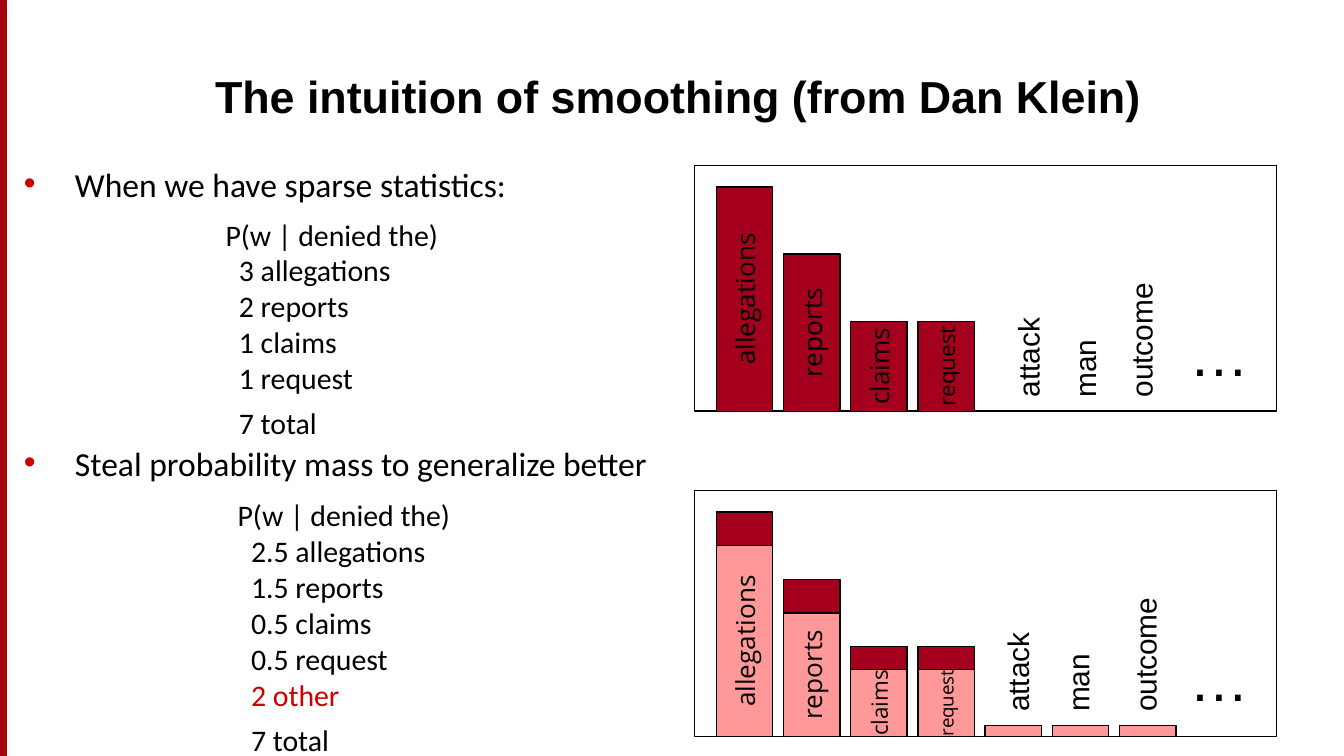
from lxml import etree
from pptx import Presentation
from pptx.dml.color import RGBColor
from pptx.enum import shapes, text
from pptx.oxml import ns
from pptx.util import Inches, Pt

COLORS = {"black": "000000", "edge": "A40508", "dark": "A4001D",
          "pink": "FF9999", "accent": "CC0000"}

# A 16:9 deck, 10 inches wide
deck = Presentation()
deck.slide_width = Inches(10)
deck.slide_height = Inches(10 * 9 / 16)
page = deck.slides.add_slide(deck.slide_layouts[5])


def write(box, words, size=16, font="Calibri", color="black", bold=False,
          align=text.PP_ALIGN.LEFT, before=0, line=None, margin=0, bullet=False):
    """Add one paragraph, using the empty first one when there is one."""
    frame = box.text_frame
    para = frame.paragraphs[0] if not frame.text else frame.add_paragraph()
    props = para._p.get_or_add_pPr()
    props.set("marL", str(Inches(margin)))
    props.set("indent", str(Inches(-margin if bullet else 0)))
    para.alignment, para.space_before = align, Pt(before)
    if line:
        para.line_spacing = line
    if bullet:
        tint = etree.SubElement(props, ns.qn("a:buClr"))
        etree.SubElement(tint, ns.qn("a:srgbClr"), val=COLORS["accent"])
        etree.SubElement(props, ns.qn("a:buFont"), typeface="Arial")
        etree.SubElement(props, ns.qn("a:buChar"), char="•")
    span = para.add_run()
    span.text = words
    span.font.size, span.font.name, span.font.bold = Pt(size), font, bold
    span.font.color.rgb = RGBColor.from_string(COLORS[color])


def add_box(left, top, width, height, fill=None, line="black", plain=False, turn=0):
    """Add a text box (plain) or a rectangle."""
    place = [Inches(value) for value in (left, top, width, height)]
    if plain:
        box = page.shapes.add_textbox(*place)
        box.text_frame.word_wrap = True
    else:
        box = page.shapes.add_shape(shapes.MSO_SHAPE.RECTANGLE, *place)
        box.shadow.inherit = False
        box.line.color.rgb = RGBColor.from_string(COLORS[line])
        box.line.width = Pt(0.75)
        box.text_frame.word_wrap = False
        box.text_frame.vertical_anchor = text.MSO_ANCHOR.MIDDLE
        if fill:
            box.fill.solid()
            box.fill.fore_color.rgb = RGBColor.from_string(COLORS[fill])
        else:
            box.fill.background()
    box.rotation = turn
    return box


# Left edge stripe
add_box(-2.79, 2.79, 5.63, 0.05, fill="edge", line="dark", turn=90)

# Title
title = page.shapes.title
title.left, title.top = Inches(1.5), Inches(0.15)
title.width, title.height = Inches(8.17), Inches(0.81)
title.text_frame.vertical_anchor = text.MSO_ANCHOR.BOTTOM
write(title, "The intuition of smoothing (from Dan Klein)", size=24, font="Arial", bold=True)

# Main points
body = add_box(0.08, 1.25, 9, 4.42, plain=True)
for words, before in [("When we have sparse statistics:", 0),
                      ("Steal probability mass to generalize better", 134.6)]:
    write(body, words, size=18, before=before, line=0.7, margin=0.38, bullet=True)

# Count lists
counts = [
    (1.58, 1.56, 1.78, ["3 allegations", "2 reports", "1 claims", "1 request"]),
    (1.67, 3.65, 2.05, ["2.5 allegations", "1.5 reports", "0.5 claims",
                        "0.5 request", "2 other"]),
]
for left, top, height, rows in counts:
    box = add_box(left, top, 2.67, height, plain=True)
    write(box, "P(w | denied the)")
    for row in rows:
        write(box, row, margin=0.1, color="accent" if row == "2 other" else "black")
    write(box, "7 total", margin=0.1, before=5)

# Histograms: each bar is (height, label, label size), standing on the frame
FIRST_BAR, STEP, BAR_WIDTH = 5.54, 0.5, 0.42
FRAME_HEIGHT, LABEL_LENGTH, LABEL_HEIGHT = 1.83, 1.25, 0.37
seen = [(1.67, "allegations", 14), (1.17, "reports", 14),
        (0.67, "claims", 14), (0.67, "request", 12)]
smoothed = [(1.42, "allegations", 14), (0.92, "reports", 14), (0.5, "claims", 12),
            (0.5, "request", 10)] + [(0.08, "", 10)] * 3
histograms = [
    # frame top, bar layers, label middle, label centres, top of the dots
    (1.23, [("dark", seen)], 2.43, [7.65, 8.07, 8.49], 2.31),
    (3.65, [("dark", [(height, "", size) for height, _, size in seen]),
            ("pink", smoothed)], 4.77, [7.57, 8.02, 8.52], 4.73),
]
for top, layers, middle, centres, dots_top in histograms:
    add_box(5.17, top, 4.33, FRAME_HEIGHT)
    for fill, bars in layers:
        for index, (height, label, size) in enumerate(bars):
            centre_x = FIRST_BAR + index * STEP
            centre_y = top + FRAME_HEIGHT - height / 2
            bar = add_box(centre_x - height / 2, centre_y - BAR_WIDTH / 2,
                          height, BAR_WIDTH, fill=fill, turn=270)
            if label:
                write(bar, label, size=size, font="Open Sans", align=text.PP_ALIGN.CENTER)
    # Unseen words
    for word, centre in zip(["attack", "man", "outcome"], centres):
        label = add_box(centre - LABEL_LENGTH / 2, middle - LABEL_HEIGHT / 2,
                        LABEL_LENGTH, LABEL_HEIGHT, plain=True, turn=270)
        write(label, word, font="Arial")
    write(add_box(8.75, dots_top, 0.58, 0.63, plain=True), "…", size=32, font="Arial")

deck.save("out.pptx")
